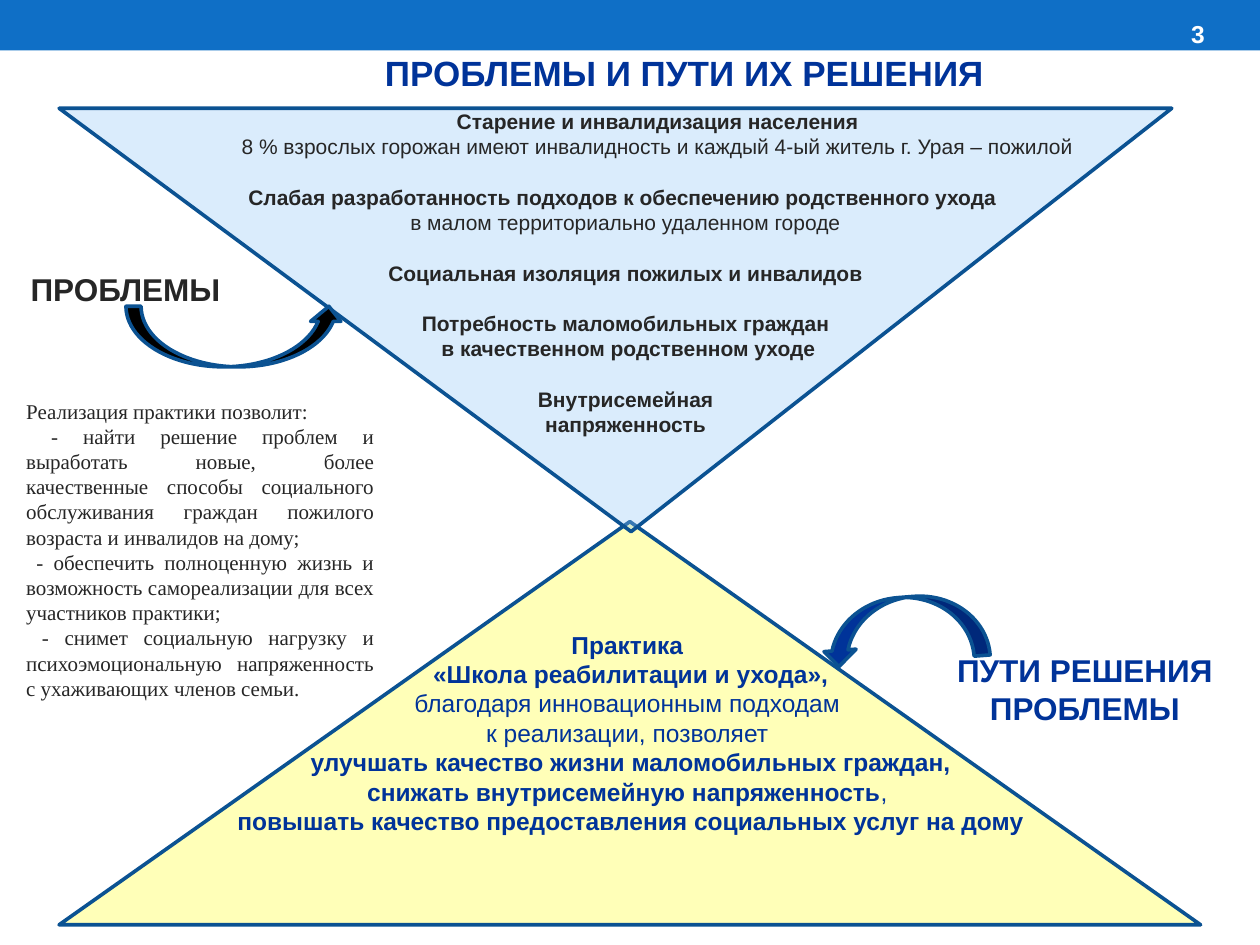
from dataclasses import dataclass

import pptx
import pptx.dml.color
import pptx.enum.shapes
import pptx.enum.text
import pptx.oxml.ns
import pptx.util
from lxml import etree

Pt = pptx.util.Pt
ALIGN = pptx.enum.text.PP_ALIGN
ANCHOR = pptx.enum.text.MSO_ANCHOR
SHAPE = pptx.enum.shapes.MSO_SHAPE

COLORS = {
    "bar": "0F6FC6", "outline": "0B5292", "navy": "003399", "dark": "262626",
    "white": "FFFFFF", "black": "000000", "yellow": "FFFF00", "sky": "91C6F7",
}
LINE_HEIGHT = 1.2  # line pitch relative to the font size


@dataclass
class Line:
    text: str
    bold: bool = True
    gap: float = 0  # blank lines before this one
    regular_tail: str = ""


@dataclass
class TextBlock:
    box: tuple[float, float, float, float]
    lines: list[Line]
    size: float
    color: str
    align: ALIGN = ALIGN.CENTER
    anchor: ANCHOR = ANCHOR.TOP
    font: str = "Arial"
    top_margin: float = 3.6


@dataclass
class Figure:
    kind: SHAPE
    box: tuple[float, float, float, float]
    fill: str
    opacity: int = 100
    rotation: float = 0
    adjustment: float | None = None
    outlined: bool = True


TITLE = TextBlock((129.6, 25.9, 528.5, 31.7), [Line("ПРОБЛЕМЫ И ПУТИ ИХ РЕШЕНИЯ ")], 20, "navy")

FIGURES = [
    Figure(SHAPE.RECTANGLE, (0, 0, 720, 28.8), "bar", outlined=False),
    Figure(SHAPE.ISOSCELES_TRIANGLE, (33.8, 298.1, 652.3, 230.4), "yellow", 28),
    Figure(SHAPE.ISOSCELES_TRIANGLE, (33.8, 61.9, 635.8, 241.9), "sky", 33, 180, 0.486),
    Figure(SHAPE.CURVED_UP_ARROW, (72, 175, 124.6, 34.6), "black"),
    Figure(SHAPE.CURVED_UP_ARROW, (468.7, 341.3, 95.8, 36.7), "navy", rotation=175.6),
]

TEXT_BLOCKS = [
    TextBlock((67.7, 0, 627.8, 38.2), [Line("3")], 14, "white", ALIGN.RIGHT, ANCHOR.MIDDLE),
    TextBlock((72, 58.3, 607.7, 51.1), [
        Line("Старение и инвалидизация населения"),
        Line("8 % взрослых горожан имеют инвалидность и каждый 4-ый житель г. Урая – пожилой", False),
    ], 12, "dark"),
    TextBlock((67.7, 72, 579.6, 200.9), [
        Line("Слабая разработанность подходов к обеспечению родственного ухода "),
        Line("в малом территориально удаленном городе", False),
        Line("Социальная изоляция пожилых и инвалидов", gap=1),
        Line("Потребность маломобильных граждан", gap=1),
        Line(" в качественном родственном уходе"),
        Line("Внутрисемейная", gap=1),
        Line("напряженность"),
    ], 12, "dark", top_margin=33.5),
    TextBlock((56.2, 321.8, 608.4, 159.8), [
        Line("Практика "),
        Line("«Школа реабилитации и ухода»,"),
        Line("благодаря инновационным подходам ", False),
        Line("к реализации, позволяет ", False),
        Line("улучшать качество жизни маломобильных граждан,"),
        Line("снижать внутрисемейную напряженность", regular_tail=", "),
        Line("повышать качество предоставления социальных услуг на дому"),
    ], 14, "navy", top_margin=38),
    TextBlock((9.4, 150.5, 124.6, 28.8), [Line("ПРОБЛЕМЫ")], 18, "dark"),
    TextBlock((519.1, 368.6, 201.6, 51.1), [Line("ПУТИ РЕШЕНИЯ ПРОБЛЕМЫ")], 18, "navy"),
    TextBlock((7.9, 223.2, 213.1, 181.4), [
        Line("Реализация практики позволит:", False),
        Line(" - найти решение проблем и выработать новые, более качественные способы "
             "социального обслуживания граждан пожилого возраста и инвалидов на дому;", False),
        Line(" - обеспечить полноценную жизнь и возможность самореализации для всех "
             "участников практики;", False),
        Line(" - снимет социальную нагрузку и психоэмоциональную напряженность "
             "с ухаживающих членов семьи.", False),
    ], 12, "dark", ALIGN.JUSTIFY, ANCHOR.MIDDLE, "Times New Roman"),
]


def rgb(name: str) -> pptx.dml.color.RGBColor:
    return pptx.dml.color.RGBColor.from_string(COLORS[name])


def write_text(shape, block: TextBlock) -> None:
    frame = shape.text_frame
    frame.word_wrap = True
    frame.auto_size = pptx.enum.text.MSO_AUTO_SIZE.NONE
    frame.vertical_anchor = block.anchor
    frame.margin_left = frame.margin_right = Pt(7.2)
    frame.margin_top, frame.margin_bottom = Pt(block.top_margin), Pt(3.6)
    frame.text = "\n".join(line.text for line in block.lines)
    pitch = block.size * LINE_HEIGHT
    for paragraph, line in zip(frame.paragraphs, block.lines):
        paragraph.alignment = block.align
        paragraph.line_spacing = Pt(pitch)
        paragraph.space_before = Pt(line.gap * pitch)
        if line.regular_tail:
            paragraph.add_run().text = line.regular_tail
        for index, run in enumerate(paragraph.runs):
            run.font.name = block.font
            run.font.size = Pt(block.size)
            run.font.bold = line.bold and index == 0
            run.font.color.rgb = rgb(block.color)


def draw_figure(slide, figure: Figure) -> None:
    shape = slide.shapes.add_shape(figure.kind, *map(Pt, figure.box))
    shape.shadow.inherit = False
    shape.rotation = figure.rotation
    if figure.adjustment is not None:
        shape.adjustments[0] = figure.adjustment
    shape.fill.solid()
    shape.fill.fore_color.rgb = rgb(figure.fill)
    if figure.opacity < 100:
        qn = pptx.oxml.ns.qn
        color = shape._element.spPr.find(qn("a:solidFill")).find(qn("a:srgbClr"))
        etree.SubElement(color, qn("a:alpha")).set("val", str(figure.opacity * 1000))
    if figure.outlined:
        shape.line.color.rgb = rgb("outline")
        shape.line.width = Pt(2.08)
    else:
        shape.line.fill.background()


def main() -> None:
    presentation = pptx.Presentation()
    presentation.slide_width, presentation.slide_height = Pt(720), Pt(540)
    slide = presentation.slides.add_slide(presentation.slide_layouts[5])
    title = slide.shapes.title
    title.left, title.top, title.width, title.height = map(Pt, TITLE.box)
    write_text(title, TITLE)
    for figure in FIGURES:
        draw_figure(slide, figure)
    for block in TEXT_BLOCKS:
        write_text(slide.shapes.add_textbox(*map(Pt, block.box)), block)
    presentation.save("out.pptx")


if __name__ == "__main__":
    main()
